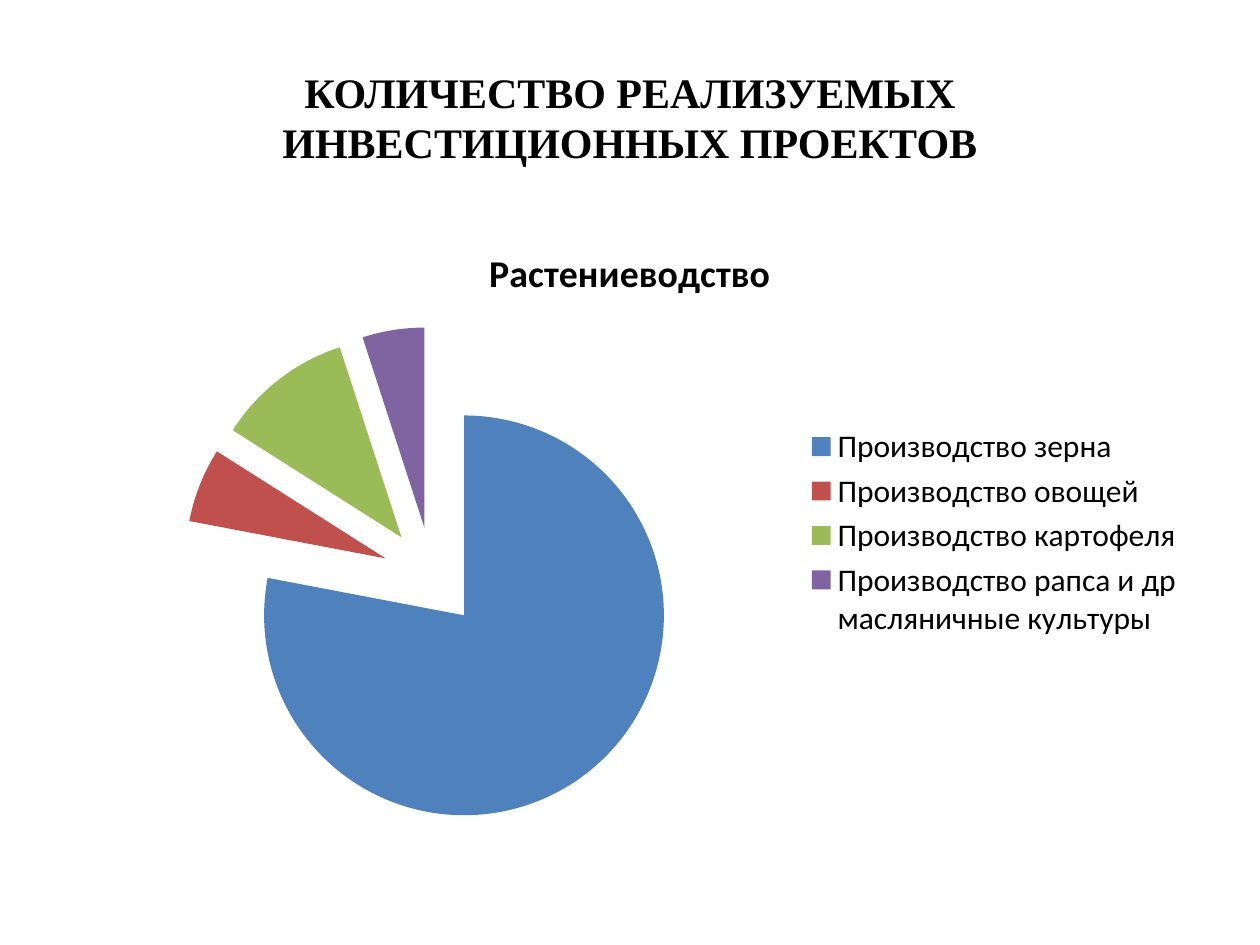
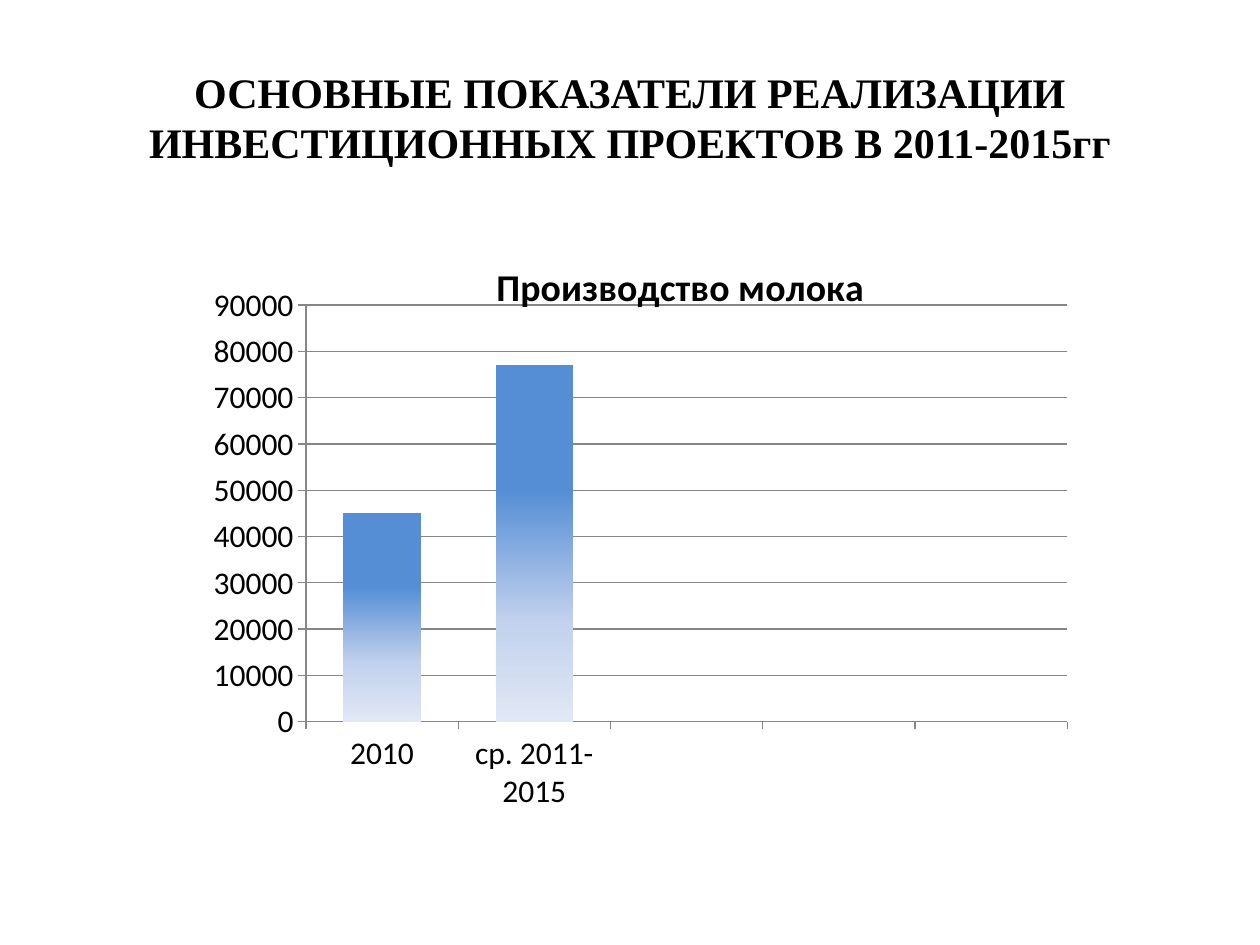
import pptx
import pptx.chart.data
import pptx.dml.color
import pptx.enum.chart
import pptx.enum.text
import pptx.oxml
import pptx.oxml.ns
import pptx.util
from lxml import etree
from pptx.util import Inches

BLACK = "000000"
AXIS_GREY = "868686"
PIE_COLOURS = ["4F81BD", "C0504D", "9BBB59", "8064A2"]
COLUMN_GRADIENT = [(35, "558ED5"), (72, "C2D1ED"), (100, "E1E8F5")]


def colour(hex_string):
    return pptx.dml.color.RGBColor.from_string(hex_string)


class Deck:
    """Holds the shared style and the current slide."""

    title_font = "Times New Roman"
    chart_font = "Calibri"

    def __init__(self):
        self.presentation = pptx.Presentation()
        self.presentation.slide_width = Inches(10)
        self.presentation.slide_height = Inches(7.5)
        self.slide = None

    def style(self, font, name, size, bold=False):
        font.name = name
        font.size = pptx.util.Pt(size)
        font.bold = bold
        font.color.rgb = colour(BLACK)

    def add_slide(self, title):
        self.slide = self.presentation.slides.add_slide(self.presentation.slide_layouts[5])
        shape = self.slide.shapes.title
        shape.left, shape.top = Inches(0.5), Inches(0.3)
        shape.width, shape.height = Inches(9), Inches(1.25)
        frame = shape.text_frame
        frame.text = title
        frame.vertical_anchor = pptx.enum.text.MSO_ANCHOR.MIDDLE
        paragraph = frame.paragraphs[0]
        paragraph.alignment = pptx.enum.text.PP_ALIGN.CENTER
        self.style(paragraph.runs[0].font, self.title_font, 24, True)

    def add_chart(self, kind, box, title, categories, values):
        data = pptx.chart.data.CategoryChartData()
        data.categories = categories
        data.add_series(title, values)
        chart = self.slide.shapes.add_chart(kind, *map(Inches, box), data).chart
        self.style(chart.font, self.chart_font, 18)
        chart.has_legend = False
        chart.has_title = True
        frame = chart.chart_title.text_frame
        frame.text = title
        self.style(frame.paragraphs[0].runs[0].font, self.chart_font, 21.6, True)
        return chart

    def add_pie(self, box, title, categories, values, explosion):
        chart = self.add_chart(pptx.enum.chart.XL_CHART_TYPE.PIE, box, title, categories, values)
        chart.has_legend = True
        chart.legend.position = pptx.enum.chart.XL_LEGEND_POSITION.RIGHT
        chart.legend.include_in_layout = False
        plot = chart.plots[0]
        plot.vary_by_categories = True
        series = plot.series[0]
        for index, slice_colour in enumerate(PIE_COLOURS):
            fill = series.points[index].format.fill
            fill.solid()
            fill.fore_color.rgb = colour(slice_colour)
        element = pptx.oxml.parse_xml(
            f'<c:explosion {pptx.oxml.ns.nsdecls("c")} val="{explosion}"/>')
        series._element.find(pptx.oxml.ns.qn("c:dPt")).addprevious(element)

    def add_columns(self, box, title, categories, values, plot_box):
        chart = self.add_chart(
            pptx.enum.chart.XL_CHART_TYPE.COLUMN_CLUSTERED, box, title, categories, values)
        plot = chart.plots[0]
        plot.vary_by_categories = False
        plot.gap_width, plot.overlap = 96, 59
        self.fill_gradient(plot.series[0])
        for axis in (chart.category_axis, chart.value_axis):
            axis.major_tick_mark = pptx.enum.chart.XL_TICK_MARK.OUTSIDE
            axis.format.line.color.rgb = colour(AXIS_GREY)
        value_axis = chart.value_axis
        value_axis.minimum_scale, value_axis.maximum_scale = 0, 90000
        value_axis.major_unit = 10000
        value_axis.has_major_gridlines = True
        value_axis.major_gridlines.format.line.color.rgb = colour(AXIS_GREY)
        self.place_plot(chart, plot_box)

    def fill_gradient(self, series):
        fill = series.format.fill
        fill.gradient()
        fill.gradient_angle = 270
        qn = pptx.oxml.ns.qn
        stops = series._element.find(".//" + qn("a:gsLst"))
        for stop in list(stops):
            stops.remove(stop)
        for percent, stop_colour in COLUMN_GRADIENT:
            stop = etree.SubElement(stops, qn("a:gs"), pos=str(percent * 1000))
            etree.SubElement(stop, qn("a:srgbClr"), val=stop_colour)

    def place_plot(self, chart, plot_box):
        qn = pptx.oxml.ns.qn
        area = chart._chartSpace.find(".//" + qn("c:plotArea"))
        layout = area.find(qn("c:layout"))
        if layout is None:
            layout = etree.Element(qn("c:layout"))
            area.insert(0, layout)
        manual = etree.SubElement(layout, qn("c:manualLayout"))
        settings = [("layoutTarget", "inner"), ("xMode", "edge"), ("yMode", "edge")]
        settings += zip("xywh", map(str, plot_box))
        for name, value in settings:
            etree.SubElement(manual, qn("c:" + name), val=value)


def main():
    deck = Deck()

    deck.add_slide("КОЛИЧЕСТВО РЕАЛИЗУЕМЫХ ИНВЕСТИЦИОННЫХ ПРОЕКТОВ")
    crops = ["Производство зерна", "Производство овощей", "Производство картофеля",
             "Производство рапса и др масляничные культуры"]
    deck.add_pie((0.5, 1.75, 9, 4.95), "Растениеводство", crops, [78, 6, 11, 5], 25)

    deck.add_slide("ОСНОВНЫЕ ПОКАЗАТЕЛИ РЕАЛИЗАЦИИ ИНВЕСТИЦИОННЫХ ПРОЕКТОВ В 2011-2015гг")
    periods = ["2010", "ср. 2011-2015"] + [""] * 3
    milk = [45000, 77000] + [None] * 3
    deck.add_columns((1.54, 1.86, 7.72, 4.88), "Производство молока", periods, milk,
                     (0.115, 0.115, 0.783, 0.678))

    deck.presentation.save("out.pptx")


if __name__ == "__main__":
    main()
